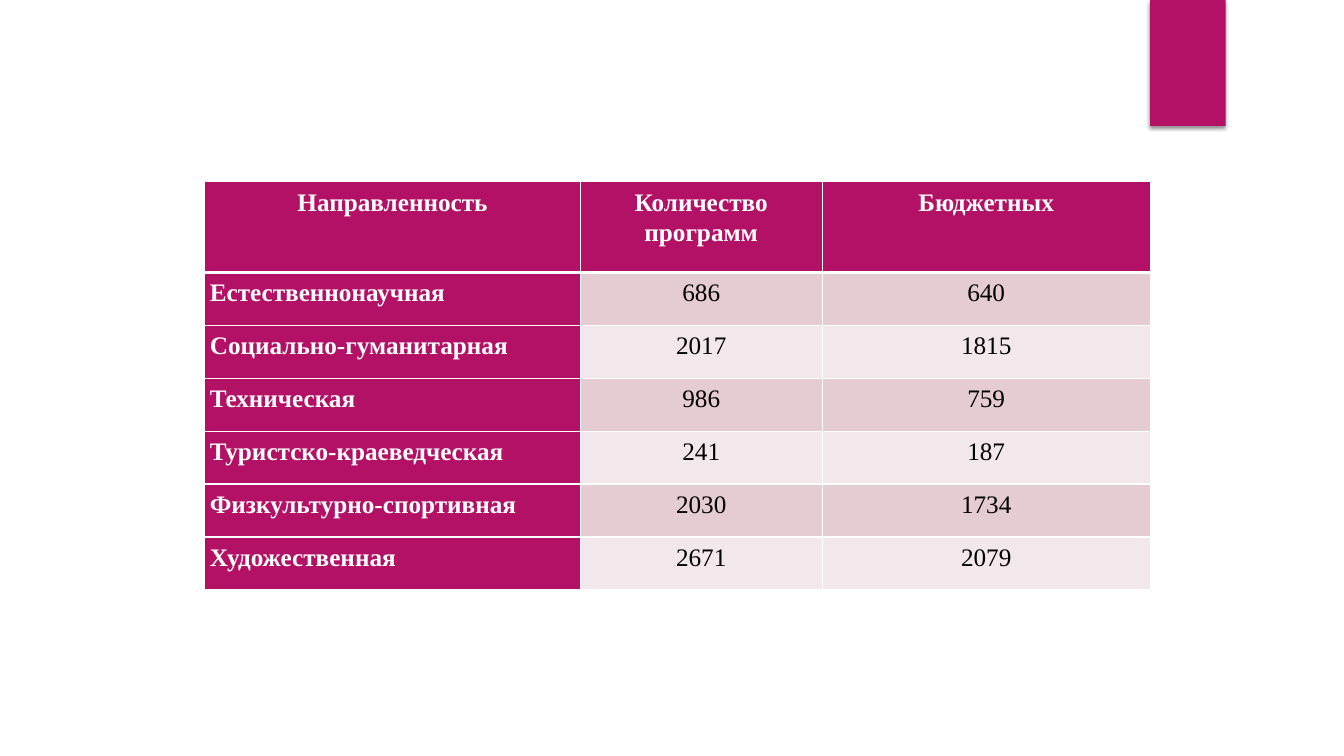
import pptx
import pptx.dml.color
import pptx.enum.shapes
import pptx.enum.text
import pptx.oxml
import pptx.oxml.ns
import pptx.util

Pt = pptx.util.Pt
RGBColor = pptx.dml.color.RGBColor
ALIGN = pptx.enum.text.PP_ALIGN

MAGENTA = RGBColor(0xB3, 0x11, 0x66)
BAND_DARK = RGBColor(0xE5, 0xCC, 0xD3)
BAND_LIGHT = RGBColor(0xF2, 0xE7, 0xEA)
WHITE = RGBColor(0xFF, 0xFF, 0xFF)
BLACK = RGBColor(0x00, 0x00, 0x00)
NS = pptx.oxml.ns.nsdecls("a")

HEADER = ("Направленность", "Количество программ", "Бюджетных")
PROGRAMS = [
    ("Естественнонаучная", 686, 640),
    ("Социально-гуманитарная", 2017, 1815),
    ("Техническая", 986, 759),
    ("Туристско-краеведческая", 241, 187),
    ("Физкультурно-спортивная", 2030, 1734),
    ("Художественная", 2671, 2079),
]
COLUMN_WIDTHS = (268.2, 172.8, 234.3)
HEADER_HEIGHT, ROW_HEIGHT = 64.8, 37.8


def write_text(tf, text, color=BLACK, bold=False, align=ALIGN.CENTER, space_after=0):
    p = tf.paragraphs[0]
    p.alignment = align
    p.line_spacing = 1.07
    p.space_after = Pt(space_after)
    r = p.add_run()
    r.text = text
    r.font.name = "Times New Roman"
    r.font.size = Pt(18)
    r.font.bold = bold
    r.font.color.rgb = color


def set_borders(cell, **widths):
    """Draw white borders; the keywords L, R, T and B give widths in points."""
    for side, width in widths.items():
        cell._tc.get_or_add_tcPr().append(pptx.oxml.parse_xml(
            f'<a:ln{side} {NS} w="{Pt(width)}"><a:solidFill>'
            f'<a:srgbClr val="{WHITE}"/></a:solidFill></a:ln{side}>'))


prs = pptx.Presentation()
prs.slide_width, prs.slide_height = Pt(960), Pt(540)
slide = prs.slides.add_slide(prs.slide_layouts[6])

# Corner tab with a soft shadow below it
tab = slide.shapes.add_shape(
    pptx.enum.shapes.MSO_SHAPE.RECTANGLE, Pt(821.5), Pt(0), Pt(54), Pt(90))
tab.fill.solid()
tab.fill.fore_color.rgb = MAGENTA
tab.line.fill.background()
tab.shadow.inherit = False
effects = tab._element.spPr.find(pptx.oxml.ns.qn("a:effectLst"))
effects.append(pptx.oxml.parse_xml(
    f'<a:outerShdw {NS} blurRad="{Pt(3)}" dist="{Pt(2)}" dir="5400000" rotWithShape="0">'
    f'<a:srgbClr val="{BLACK}"><a:alpha val="45000"/></a:srgbClr></a:outerShdw>'))

# Table of programmes
rows = [HEADER] + PROGRAMS
table = slide.shapes.add_table(
    len(rows), len(HEADER), Pt(146.3), Pt(129.8), Pt(sum(COLUMN_WIDTHS)),
    Pt(HEADER_HEIGHT + ROW_HEIGHT * len(PROGRAMS))).table
table.first_col = True
for column, width in zip(table.columns, COLUMN_WIDTHS):
    column.width = Pt(width)

for i, values in enumerate(rows):
    table.rows[i].height = Pt(ROW_HEIGHT if i else HEADER_HEIGHT)
    for j, value in enumerate(values):
        cell = table.cell(i, j)
        cell.margin_left = cell.margin_right = Pt(3.6)
        cell.margin_top = cell.margin_bottom = Pt(3.6)
        set_borders(cell, L=1, R=1, T=3 if i == 1 else 1, B=1 if i else 3)
        heading = i == 0 or j == 0
        cell.fill.solid()
        cell.fill.fore_color.rgb = MAGENTA if heading else BAND_DARK if i % 2 else BAND_LIGHT
        write_text(cell.text_frame, str(value),
                   color=WHITE if heading else BLACK, bold=heading,
                   align=ALIGN.JUSTIFY if i and j == 0 else ALIGN.CENTER,
                   space_after=0 if i else 8)

prs.save("out.pptx")
